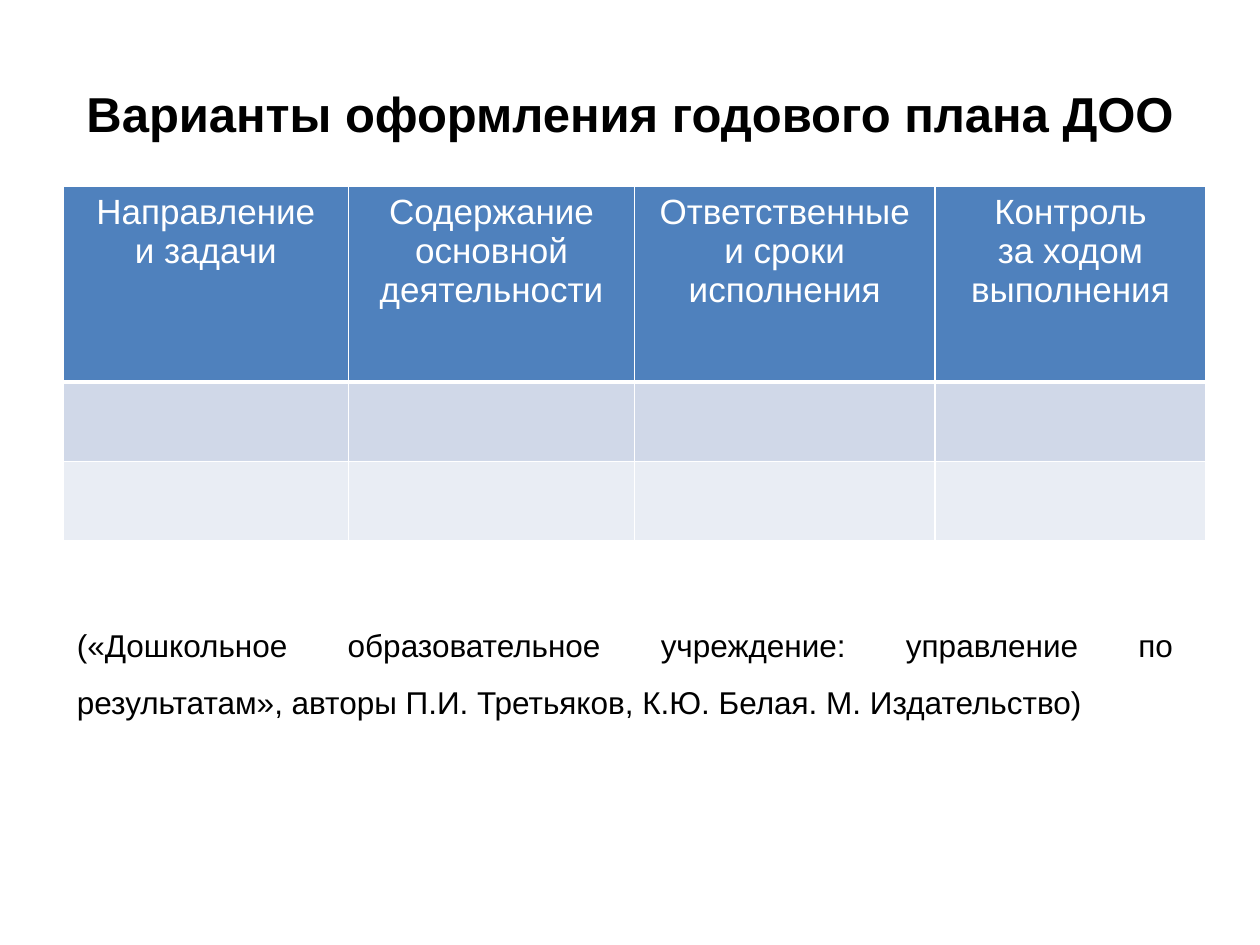
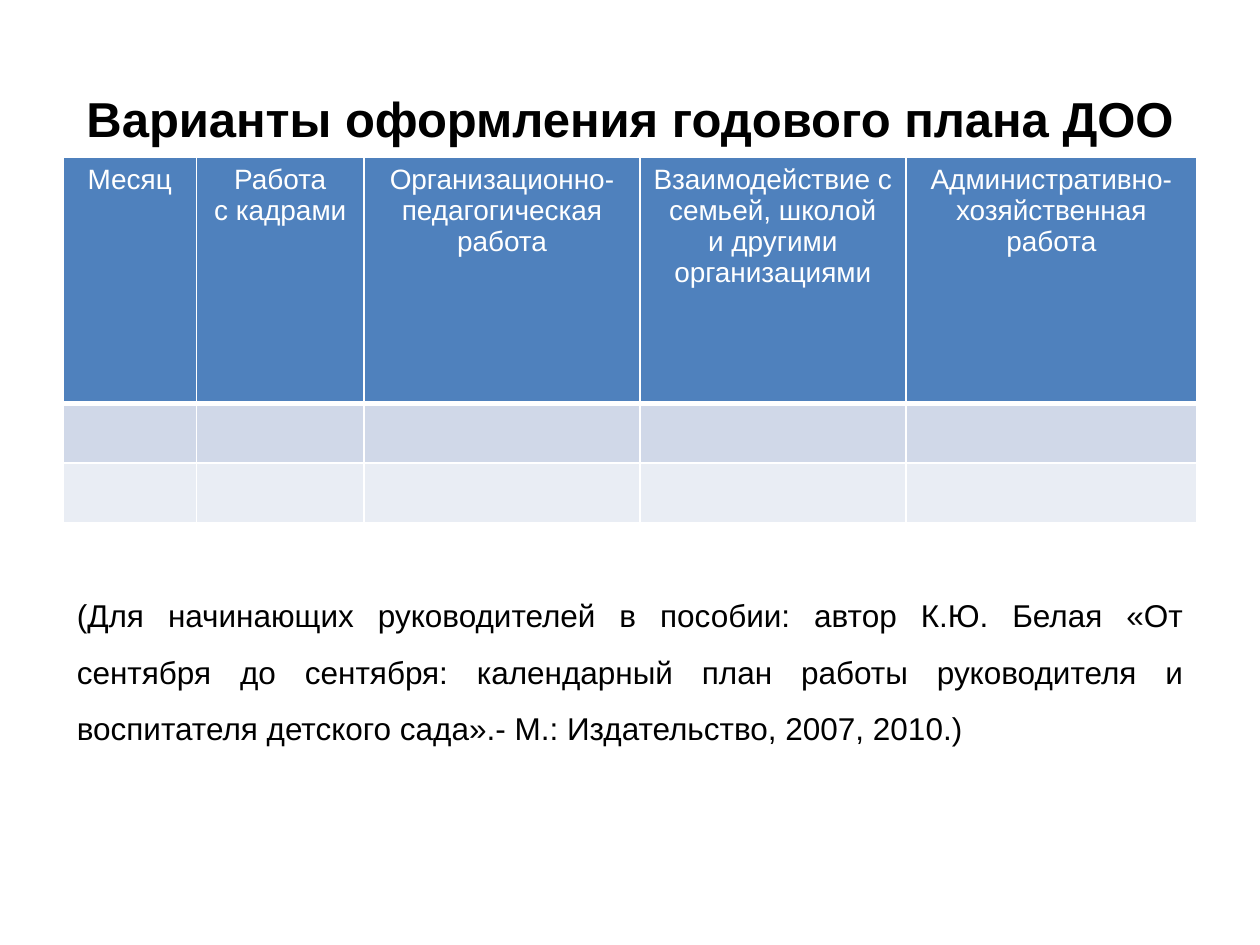
from lxml.etree import SubElement
from pptx import Presentation
from pptx.dml.color import RGBColor
from pptx.enum.text import MSO_ANCHOR as Anchor
from pptx.enum.text import MSO_AUTO_SIZE as AutoSize
from pptx.enum.text import PP_ALIGN as Align
from pptx.oxml import parse_xml
from pptx.oxml.ns import nsdecls, qn
from pptx.util import Cm, Pt

COLORS = {
    "text": "000000",
    "white": "FFFFFF",
    "header": "4F81BD",
    "band_dark": "D0D8E8",
    "band_light": "E9EDF4",
}
FONT = "Arial"
TITLE = "Варианты оформления годового плана ДОО"
TITLE_ONLY = 5
LEFT = 1.27
ROW_FILLS = ("header", "band_dark", "band_light")


def color(name):
    return RGBColor.from_string(COLORS[name])


def write_para(para, text, size, ink, align, spacing=None, bold=False):
    para.alignment = align
    if spacing:
        para.line_spacing = spacing
    span = para.add_run()
    span.text = text
    span.font.name = FONT
    span.font.size = Pt(size)
    span.font.bold = bold
    span.font.color.rgb = color(ink)


def add_title(page, top, height):
    title = page.shapes.title
    title.left, title.top = Cm(LEFT), Cm(top)
    title.width, title.height = Cm(22.86), Cm(height)
    frame = title.text_frame
    frame.auto_size = AutoSize.NONE
    frame.vertical_anchor = Anchor.MIDDLE
    write_para(frame.paragraphs[0], TITLE, 28, "text", Align.CENTER, 1.5, True)


def set_borders(cell, bottom_width):
    """Draw white lines on all four sides of the cell."""
    properties = cell._tc.get_or_add_tcPr()
    widths = {"lnL": 1, "lnR": 1, "lnT": 1, "lnB": bottom_width}
    for index, (tag, width) in enumerate(widths.items()):
        line = parse_xml(f'<a:{tag} {nsdecls("a")} w="{Pt(width)}"/>')
        fill = SubElement(line, qn("a:solidFill"))
        SubElement(fill, qn("a:srgbClr"), val=COLORS["white"])
        properties.insert(index, line)


def add_plan_table(page, top, widths, heights, headings, size):
    """Add a table with a filled header row and empty banded rows."""
    table = page.shapes.add_table(
        len(heights), len(widths), Cm(LEFT), Cm(top),
        Cm(sum(widths)), Cm(sum(heights))).table
    for column, width in zip(table.columns, widths):
        column.width = Cm(width)
    for row, height, fill in zip(table.rows, heights, ROW_FILLS):
        row.height = Cm(height)
        for cell in row.cells:
            cell.fill.solid()
            cell.fill.fore_color.rgb = color(fill)
            set_borders(cell, 3 if fill == "header" else 1)
    for cell, lines in zip(table.rows[0].cells, headings):
        frame = cell.text_frame
        for index, text in enumerate(lines):
            para = frame.add_paragraph() if index else frame.paragraphs[0]
            write_para(para, text, size, "white", Align.CENTER)


def add_source_note(page, top, width, height, text):
    box = page.shapes.add_textbox(Cm(1.3), Cm(top), Cm(width), Cm(height))
    frame = box.text_frame
    frame.word_wrap = True
    frame.auto_size = AutoSize.SHAPE_TO_FIT_TEXT
    write_para(frame.paragraphs[0], text, 18, "text", Align.JUSTIFY, 1.5)


def add_page(deck):
    page = deck.slides.add_slide(deck.slide_layouts[TITLE_ONLY])
    page.background.fill.solid()
    page.background.fill.fore_color.rgb = color("white")
    return page


def add_directions_page(deck):
    page = add_page(deck)
    add_title(page, 0.79, 2.39)
    headings = [
        ["Направление", "и задачи"],
        ["Содержание основной деятельности"],
        ["Ответственные", "и сроки исполнения"],
        ["Контроль", "за ходом выполнения"],
    ]
    add_plan_table(page, 3.76, [5.76, 5.76, 6.06, 5.46], [3.94, 1.6, 1.6],
                   headings, 20)
    add_source_note(
        page, 12.12, 22.61, 2.57,
        "(«Дошкольное образовательное учреждение: управление по результатам», "
        "авторы П.И. Третьяков, К.Ю. Белая. М. Издательство)")


def add_months_page(deck):
    page = add_page(deck)
    add_title(page, 0.99, 2.18)
    headings = [
        ["Месяц"],
        ["Работа", "с кадрами"],
        ["Организационно-педагогическая работа"],
        ["Взаимодействие с семьей, школой", "и другими организациями"],
        ["Административно-хозяйственная работа"],
    ]
    add_plan_table(page, 3.18, [2.69, 3.38, 5.56, 5.36, 5.87],
                   [4.95, 1.2, 1.2], headings, 16)
    add_source_note(
        page, 11.51, 22.81, 3.71,
        "(Для начинающих руководителей в пособии: автор К.Ю. Белая «От сентября "
        "до сентября: календарный план работы руководителя и воспитателя "
        "детского сада».- М.: Издательство, 2007, 2010.)")


def main():
    deck = Presentation()
    deck.slide_width, deck.slide_height = Cm(25.4), Cm(19.05)
    add_directions_page(deck)
    add_months_page(deck)
    deck.save("out.pptx")


if __name__ == "__main__":
    main()
